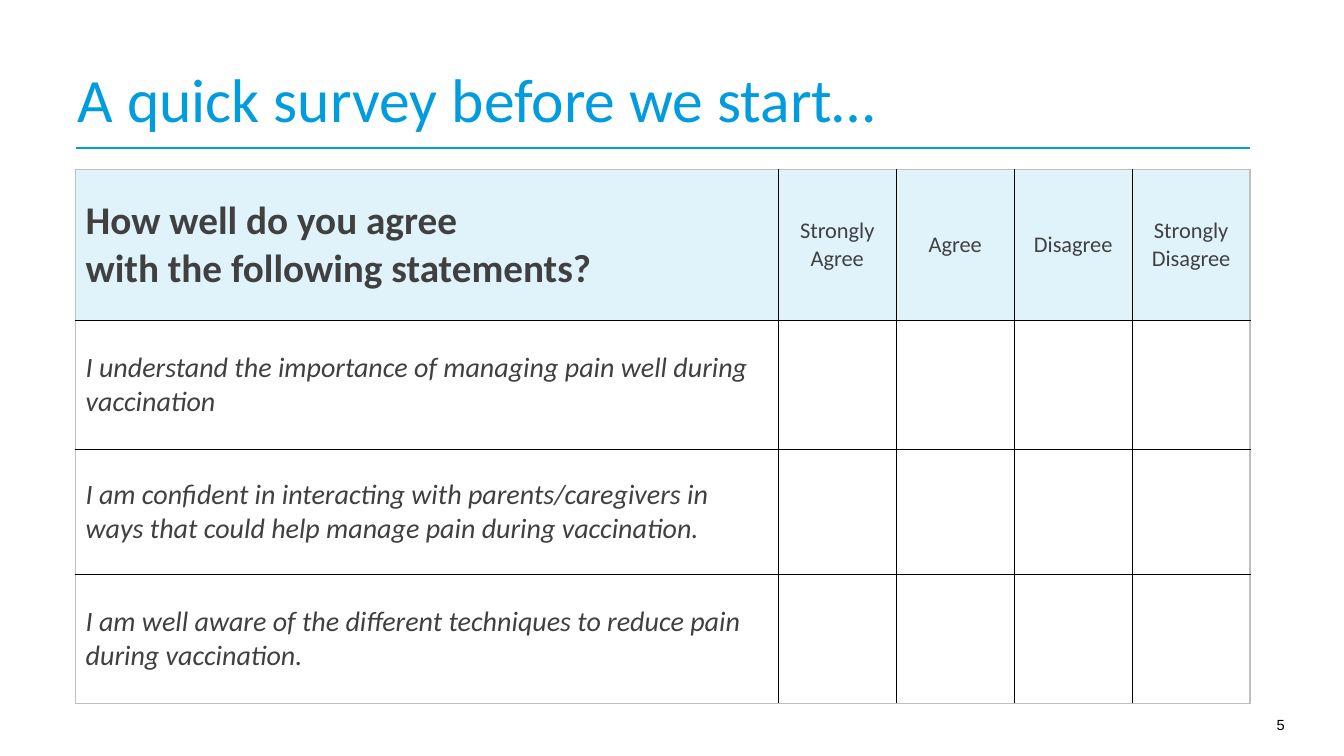
from lxml import etree
from pptx import Presentation
from pptx import util as u
from pptx.dml.color import RGBColor
from pptx.enum import shapes, text
from pptx.oxml import ns

COLORS = {"accent": "009CDE", "body": "404040", "header": "E0F3FB",
          "grid": "000000", "edge": "BFBFBF", "number": "000000"}
OPTIONS = ["Strongly Agree", "Agree", "Disagree", "Strongly Disagree"]
QUESTION = "How well do you agree\nwith the following statements?"
STATEMENTS = [
    "I understand the importance of managing pain well during vaccination",
    "I am confident in interacting with parents/caregivers in ways that could "
    "help manage pain during vaccination.",
    "I am well aware of the different techniques to reduce pain during vaccination.",
]
COLUMN_WIDTHS = [6.97] + [1.17] * len(OPTIONS)
ROW_HEIGHTS = [1.5, 1.28, 1.24, 1.28]


def rgb(color):
    return RGBColor.from_string(COLORS[color])


def write(frame, content, size=20, color="body", font="Calibri", bold=False,
          italic=False, align=text.PP_ALIGN.LEFT, spacing=None):
    for index, line in enumerate(content.split("\n")):
        paragraph = frame.paragraphs[0] if index == 0 else frame.add_paragraph()
        paragraph.alignment = align
        paragraph.line_spacing = spacing
        run = paragraph.add_run()
        run.text = line
        run.font.name, run.font.size = font, u.Pt(size)
        run.font.bold, run.font.italic = bold, italic
        run.font.color.rgb = rgb(color)


def border(cell, side, color, width):
    line = etree.Element(ns.qn(f"a:ln{side}"), w=str(u.Pt(width)))
    fill = etree.SubElement(line, ns.qn("a:solidFill"))
    etree.SubElement(fill, ns.qn("a:srgbClr"), val=COLORS[color])
    return line


class SurveySlide:
    """Holds the survey style and the slide being built."""

    def __init__(self, deck):
        self.slide = deck.slides.add_slide(deck.slide_layouts[5])

    def place(self, shape, left, top, width, height):
        shape.left, shape.top = u.Inches(left), u.Inches(top)
        shape.width, shape.height = u.Inches(width), u.Inches(height)

    def title(self, content):
        heading = self.slide.shapes.title
        self.place(heading, 0.75, 0.75, 11.23, 0.6)
        frame = heading.text_frame
        frame.auto_size = text.MSO_AUTO_SIZE.NONE
        frame.vertical_anchor = text.MSO_ANCHOR.BOTTOM
        frame.margin_left, frame.margin_right = u.Inches(0.02), u.Inches(0.39)
        frame.margin_top = frame.margin_bottom = 0
        write(frame, content, size=44, color="accent", spacing=0.9)

    def rule(self, left, right, top):
        rule = self.slide.shapes.add_connector(
            shapes.MSO_CONNECTOR.STRAIGHT, u.Inches(left), u.Inches(top),
            u.Inches(right), u.Inches(top))
        rule.line.color.rgb = rgb("accent")
        rule.line.width = u.Pt(1.5)
        etree.SubElement(rule._element.spPr, ns.qn("a:effectLst"))

    def number(self, content):
        box = self.slide.shapes.add_textbox(0, 0, 0, 0)
        self.place(box, 11.95, 7.05, 0.89, 0.29)
        box.text_frame.word_wrap = True
        write(box.text_frame, content, size=10.5, color="number", font="Arial",
              align=text.PP_ALIGN.RIGHT)

    def table(self, left, top):
        rows, columns = len(ROW_HEIGHTS), len(COLUMN_WIDTHS)
        survey = self.slide.shapes.add_table(
            rows, columns, u.Inches(left), u.Inches(top),
            u.Inches(sum(COLUMN_WIDTHS)), u.Inches(sum(ROW_HEIGHTS))).table
        for column, width in zip(survey.columns, COLUMN_WIDTHS):
            column.width = u.Inches(width)
        for row, height in zip(survey.rows, ROW_HEIGHTS):
            row.height = u.Inches(height)
        for r in range(rows):
            for c in range(columns):
                cell = survey.cell(r, c)
                cell.vertical_anchor = text.MSO_ANCHOR.MIDDLE
                if r == 0:
                    cell.fill.solid()
                    cell.fill.fore_color.rgb = rgb("header")
                else:
                    cell.fill.background()
                outer = {"L": c == 0, "R": c == columns - 1,
                         "T": r == 0, "B": r == rows - 1}
                for index, (side, is_edge) in enumerate(outer.items()):
                    line = border(cell, side, "edge" if is_edge else "grid", 1)
                    cell._tc.get_or_add_tcPr().insert(index, line)
        write(survey.cell(0, 0).text_frame, QUESTION, size=28, bold=True)
        for c, option in enumerate(OPTIONS, 1):
            write(survey.cell(0, c).text_frame, option, size=16,
                  align=text.PP_ALIGN.CENTER)
        for r, statement in enumerate(STATEMENTS, 1):
            write(survey.cell(r, 0).text_frame, statement, italic=True)


def main():
    deck = Presentation()
    deck.slide_width, deck.slide_height = u.Inches(13.33), u.Inches(7.5)
    survey = SurveySlide(deck)
    survey.number("5")
    survey.rule(0.75, 12.4, 1.47)
    survey.title("A quick survey before we start…")
    survey.table(0.75, 1.68)
    deck.save("out.pptx")


if __name__ == "__main__":
    main()
